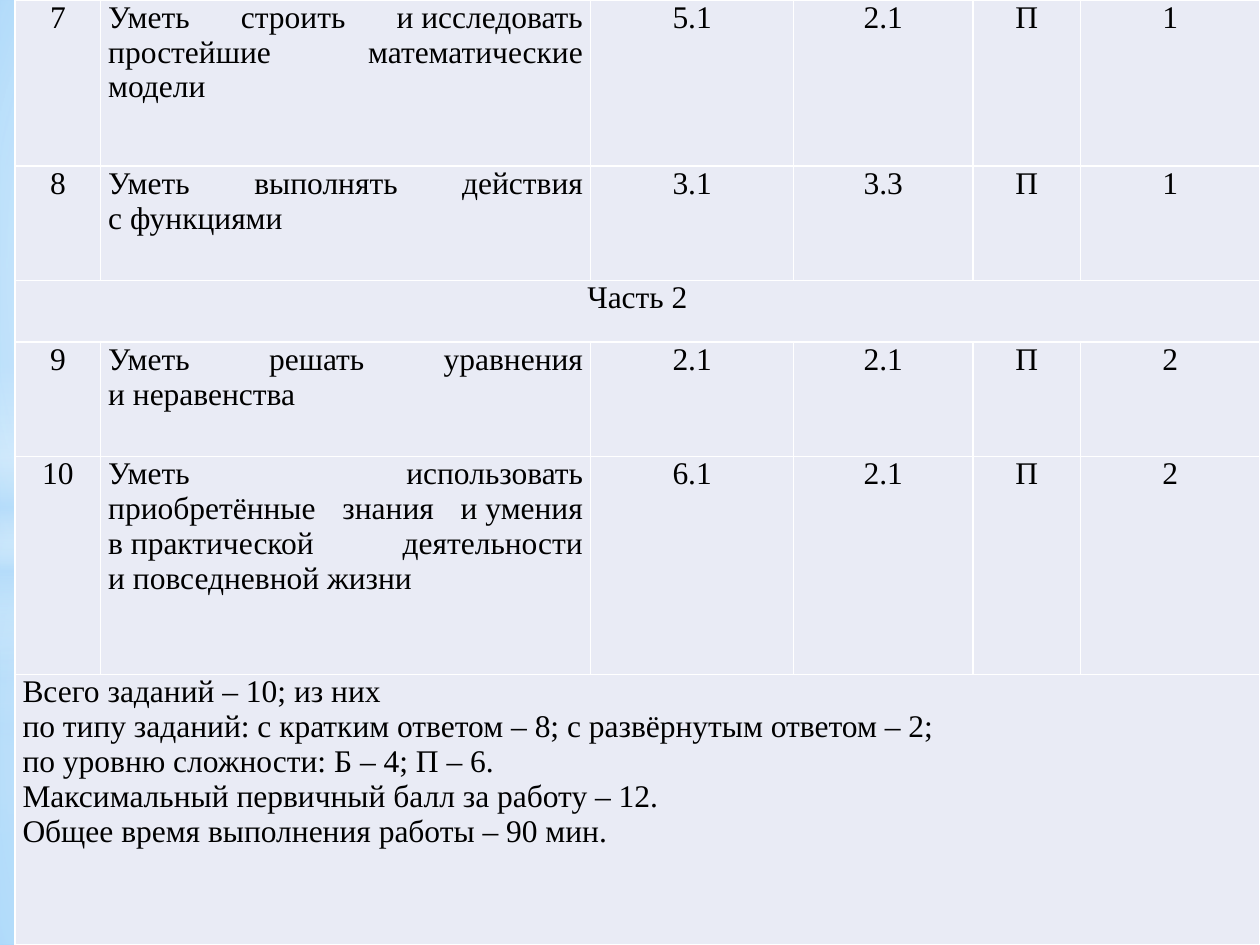
from pptx import Presentation
from pptx import util as u
from pptx.dml.color import RGBColor
from pptx.enum import shapes, text
from pptx.oxml import ns
from lxml import etree

Pt = u.Pt
ALIGN = text.PP_ALIGN
RECTANGLE, OVAL = shapes.MSO_SHAPE.RECTANGLE, shapes.MSO_SHAPE.OVAL
COLUMNS = [49, 280, 116, 102.4, 61.6, 102.4]
ROWS = [95, 65.4, 35.2, 65.4, 124.6, 154.4]
TABLE_BOX = (8.6, 0, sum(COLUMNS), sum(ROWS))
CELL_FORMAT = {
    "margin_left": Pt(1.4), "margin_right": Pt(1.4),
    "margin_top": 0, "margin_bottom": Pt(2.9),
    "vertical_anchor": text.MSO_ANCHOR.TOP,
}
FONT_FORMAT = {"name": "Times New Roman", "size": Pt(18), "bold": False}

# "~" stands for a no-break space; a single entry spans the whole row
TASKS = [
    ["7", "Уметь строить и~исследовать простейшие математические модели",
     "5.1", "2.1", "П", "1"],
    ["8", "Уметь выполнять действия с~функциями", "3.1", "3.3", "П", "1"],
    ["Часть 2"],
    ["9", "Уметь решать уравнения и~неравенства", "2.1", "2.1", "П", "2"],
    ["10", "Уметь использовать приобретённые знания и~умения "
     "в~практической деятельности и~повседневной жизни",
     "6.1", "2.1", "П", "2"],
    ["Всего заданий – 10; из них\n"
     "по типу заданий: с кратким ответом – 8; с развёрнутым ответом – 2;\n"
     "по уровню сложности: Б – 4; П – 6.\n"
     "Максимальный первичный балл за работу – 12.\n"
     "Общее время выполнения работы – 90 мин."],
]

# Gradient stops: position, colour, opacity (percent)
WHITE, SKY = "FFFFFF", "B4DCFA"
BACKGROUND = [(0, "9ED5FF", 100), (60, WHITE, 100), (100, "5BB9FF", 100)]
BAND = [(0, WHITE, 0), (29, WHITE, 30), (45, SKY, 40),
        (55, WHITE, 26), (65, SKY, 60), (100, WHITE, 0)]
CENTER = (50, 50, 50, 50)


def color(value):
    return RGBColor.from_string(value)


def set_format(target, values):
    for name, value in values.items():
        setattr(target, name, value)


def set_gradient(fill, element, stops, focus=None):
    """Circular gradient around focus, or top to bottom without one."""
    fill.gradient()
    gradient = next(element.iter(ns.qn("a:gradFill")))
    for child in list(gradient):
        gradient.remove(child)
    stop_list = etree.SubElement(gradient, ns.qn("a:gsLst"))
    for position, value, opacity in stops:
        stop = etree.SubElement(stop_list, ns.qn("a:gs"), pos=str(position * 1000))
        shade = etree.SubElement(stop, ns.qn("a:srgbClr"), val=value)
        if opacity < 100:
            etree.SubElement(shade, ns.qn("a:alpha"), val=str(opacity * 1000))
    if focus:
        circle = etree.SubElement(gradient, ns.qn("a:path"), path="circle")
        sides = {side: str(share * 1000) for side, share in zip("ltrb", focus)}
        etree.SubElement(circle, ns.qn("a:fillToRect"), **sides)
    else:
        etree.SubElement(gradient, ns.qn("a:lin"), ang="5400000", scaled="0")


def add_layer(slide, kind, top, height, stops, focus=None):
    shape = slide.shapes.add_shape(kind, 0, Pt(top), Pt(720), Pt(height))
    shape.shadow.inherit = False
    shape.line.fill.background()
    set_gradient(shape.fill, shape._element.spPr, stops, focus)


def add_sky(slide, horizon, band_top, glow_end, extra):
    """Ground, sky, band of light and glow; extra is added to the opacities."""
    ground = [(0, WHITE, 91 + extra), (37, WHITE, 76 + extra), (100, SKY, 79 + extra)]
    heaven = [(0, WHITE, 89 + extra), (48, WHITE, 62 + extra), (100, SKY, 79 + extra)]
    glow = [(0, WHITE, 100), (glow_end, WHITE, 0)]
    add_layer(slide, RECTANGLE, horizon, 540 - horizon, ground, CENTER)
    add_layer(slide, RECTANGLE, 0, horizon, heaven, CENTER)
    add_layer(slide, RECTANGLE, band_top, 180, BAND)
    add_layer(slide, OVAL, 126, 402, glow, CENTER)


def add_borders(cell, value, width):
    properties = cell._tc.get_or_add_tcPr()
    for index, side in enumerate(("lnL", "lnR", "lnT", "lnB")):
        line = etree.Element(ns.qn("a:" + side), w=str(Pt(width)))
        fill = etree.SubElement(line, ns.qn("a:solidFill"))
        etree.SubElement(fill, ns.qn("a:srgbClr"), val=value)
        properties.insert(index, line)


def style_cell(cell):
    set_format(cell, CELL_FORMAT)
    cell.fill.solid()
    cell.fill.fore_color.rgb = color("E9EBF5")
    add_borders(cell, WHITE, 1)


def write_cell(cell, content, alignment, indent):
    cell.text = content.replace("~", chr(160))
    for paragraph in cell.text_frame.paragraphs:
        paragraph.alignment = alignment
        for margin in ("marL", "marR"):
            paragraph._p.get_or_add_pPr().set(margin, str(Pt(indent)))
        for run in paragraph.runs:
            set_format(run.font, FONT_FORMAT)
            run.font.color.rgb = color("000000")


def add_task_table(slide, box):
    frame = slide.shapes.add_table(len(ROWS), len(COLUMNS), *map(Pt, box))
    table = frame.table
    set_format(table, {"first_row": False, "horz_banding": False})
    for column, width in zip(table.columns, COLUMNS):
        column.width = Pt(width)
    for row, height in zip(table.rows, ROWS):
        row.height = Pt(height)

    for row_index, contents in enumerate(TASKS):
        cells = list(table.rows[row_index].cells)
        for cell in cells:
            style_cell(cell)
        if len(contents) == 1:
            cells[0].merge(cells[-1])
        for column_index, content in enumerate(contents):
            justified = column_index == 1 or "\n" in content
            numbered = column_index == 0 and len(contents) > 1
            write_cell(cells[column_index], content,
                       ALIGN.JUSTIFY if justified else ALIGN.CENTER,
                       0 if numbered else 2.9)


def main():
    presentation = Presentation()
    presentation.slide_width, presentation.slide_height = Pt(720), Pt(540)
    slide = presentation.slides.add_slide(presentation.slide_layouts[6])
    # Background and its two layers of sky
    set_gradient(slide.background.fill, slide._element, BACKGROUND, (20, 10, 20, 60))
    add_sky(slide, 402, 296.6, 56, 0)
    add_sky(slide, 304.6, 208.8, 54, 1)
    # Task table
    add_task_table(slide, TABLE_BOX)
    presentation.save("out.pptx")


if __name__ == "__main__":
    main()
